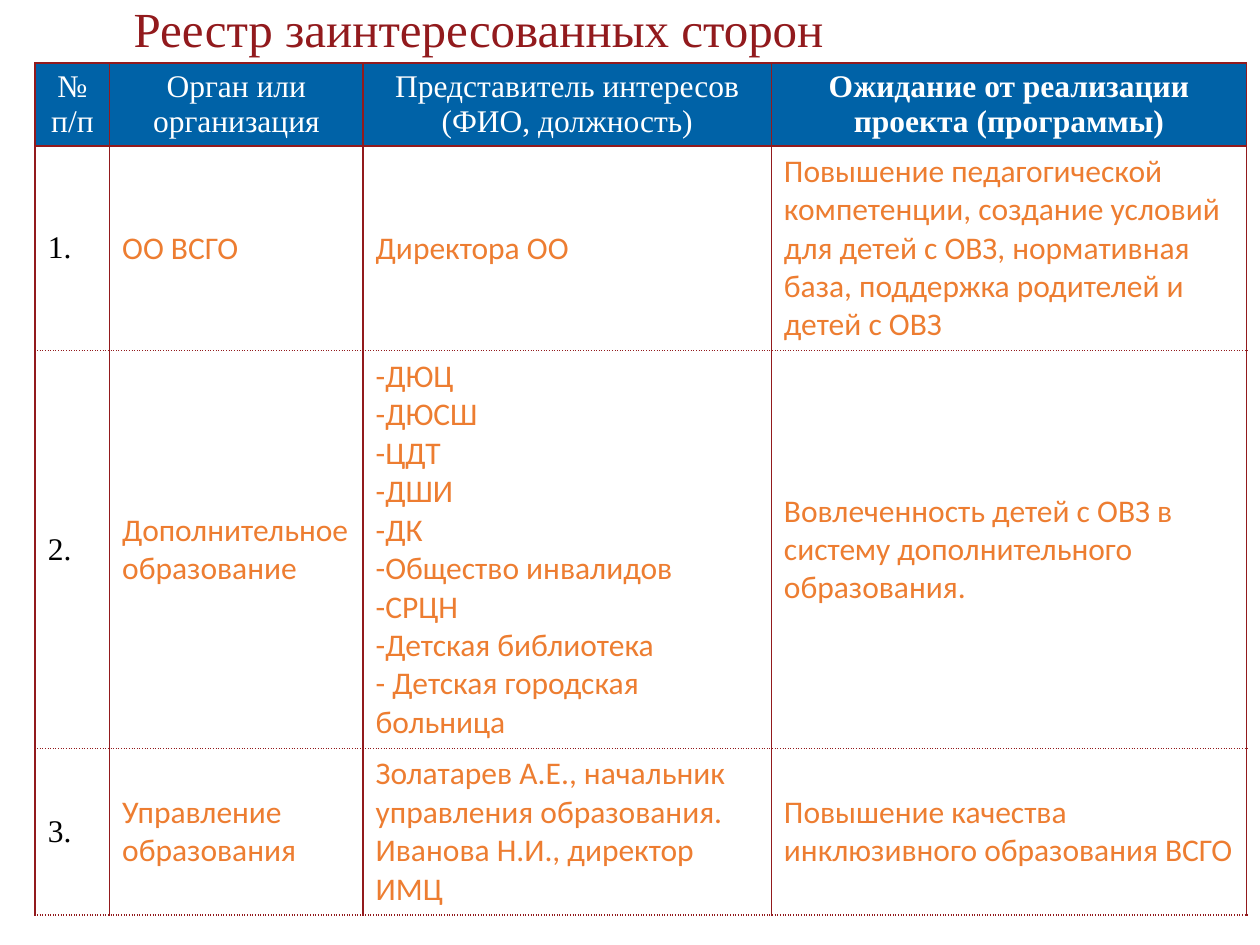
import pptx
import pptx.util
import pptx.dml.color
import pptx.enum.text
import pptx.oxml.ns
import lxml.etree

Cm, Pt = pptx.util.Cm, pptx.util.Pt
ANCHOR = pptx.enum.text.MSO_ANCHOR
ALIGN = pptx.enum.text.PP_ALIGN
qn = pptx.oxml.ns.qn

TITLE = "Реестр заинтересованных сторон"
HEAD = [
    ["№", "п/п"],
    ["Орган или организация"],
    ["Представитель интересов\n(ФИО, должность)"],
    ["Ожидание от реализации проекта (программы)"],
]
BODY = [
    [
        ["1."],
        ["ОО ВСГО"],
        ["Директора ОО"],
        ["Повышение педагогической компетенции, создание условий для детей "
         "с ОВЗ, нормативная база, поддержка родителей и детей с ОВЗ"],
    ],
    [
        ["2."],
        ["Дополнительное образование"],
        ["-ДЮЦ", "-ДЮСШ", "-ЦДТ", "-ДШИ", "-ДК", "-Общество инвалидов",
         "-СРЦН", "-Детская библиотека", "- Детская городская больница"],
        ["Вовлеченность детей с ОВЗ в систему дополнительного образования."],
    ],
    [
        ["3."],
        ["Управление образования"],
        ["Золатарев А.Е., начальник управления образования.",
         "Иванова Н.И., директор ИМЦ"],
        ["Повышение качества инклюзивного образования ВСГО"],
    ],
]
COLS = [1.5, 5.11, 8.23, 9.58]
ROWS = [1.67, 4.11, 8.02, 3.35]
COLORS = {"red": "921A1D", "blue": "0062A7", "white": "FFFFFF",
          "black": "000000", "orange": "ED7D31"}
SERIF, SANS = "Times New Roman", "Calibri"


def rgb(name):
    """Return the named colour."""
    return pptx.dml.color.RGBColor.from_string(COLORS[name])


def write(para, text, size, face, color, bold=False):
    """Add text to a paragraph, one run per line."""
    for i, line in enumerate(text.split("\n")):
        if i:
            para.add_line_break()
        run = para.add_run()
        run.text = line
        font = run.font
        font.size, font.name, font.bold = Pt(size), face, bold
        font.color.rgb = rgb(color)


def edge(cell, side, dash):
    """Draw one border of a cell."""
    props = cell._tc.get_or_add_tcPr()
    line = lxml.etree.SubElement(props, qn("a:ln" + side), w=str(Pt(1)))
    fill = lxml.etree.SubElement(line, qn("a:solidFill"))
    lxml.etree.SubElement(fill, qn("a:srgbClr"), val=COLORS["red"])
    lxml.etree.SubElement(line, qn("a:prstDash"), val=dash)


def fill_cell(cell, paras, row, col):
    """Style a cell and write its paragraphs."""
    head = row == 0
    dashes = {"L": "solid", "R": "solid",
              "T": "solid" if row < 2 else "sysDot",
              "B": "solid" if head else "sysDot"}
    for side, dash in dashes.items():
        edge(cell, side, dash)
    cell.fill.solid()
    cell.fill.fore_color.rgb = rgb("blue" if head else "white")
    cell.vertical_anchor = ANCHOR.MIDDLE
    face = SERIF if head or col == 0 else SANS
    color = "white" if head else "black" if col == 0 else "orange"
    frame = cell.text_frame
    for i, text in enumerate(paras):
        para = frame.add_paragraph() if i else frame.paragraphs[0]
        para.alignment = ALIGN.CENTER if head else ALIGN.LEFT
        write(para, text, 18, face, color, head and col == 3)


def add_title(slide):
    """Place and write the title."""
    title = slide.shapes.title
    title.left, title.top = Cm(2.44), Cm(-1.27)
    title.width, title.height = Cm(18.85), Cm(2.57)
    frame = title.text_frame
    frame.word_wrap = True
    frame.vertical_anchor = ANCHOR.BOTTOM
    para = frame.paragraphs[0]
    para.alignment = ALIGN.LEFT
    para.line_spacing = 0.9
    write(para, TITLE, 28, SERIF, "red")


def add_grid(slide):
    """Build the table of stakeholders."""
    table = slide.shapes.add_table(
        len(ROWS), len(COLS), Cm(0.71), Cm(1.27),
        Cm(sum(COLS)), Cm(sum(ROWS))).table
    for col, width in zip(table.columns, COLS):
        col.width = Cm(width)
    for row, height in zip(table.rows, ROWS):
        row.height = Cm(height)
    for r, cells in enumerate([HEAD] + BODY):
        for c, paras in enumerate(cells):
            fill_cell(table.cell(r, c), paras, r, c)


def main():
    """Build and save the slide."""
    deck = pptx.Presentation()
    deck.slide_width, deck.slide_height = Cm(25.4), Cm(19.05)
    slide = deck.slides.add_slide(deck.slide_layouts[5])
    add_title(slide)
    add_grid(slide)
    deck.save("out.pptx")


if __name__ == "__main__":
    main()
